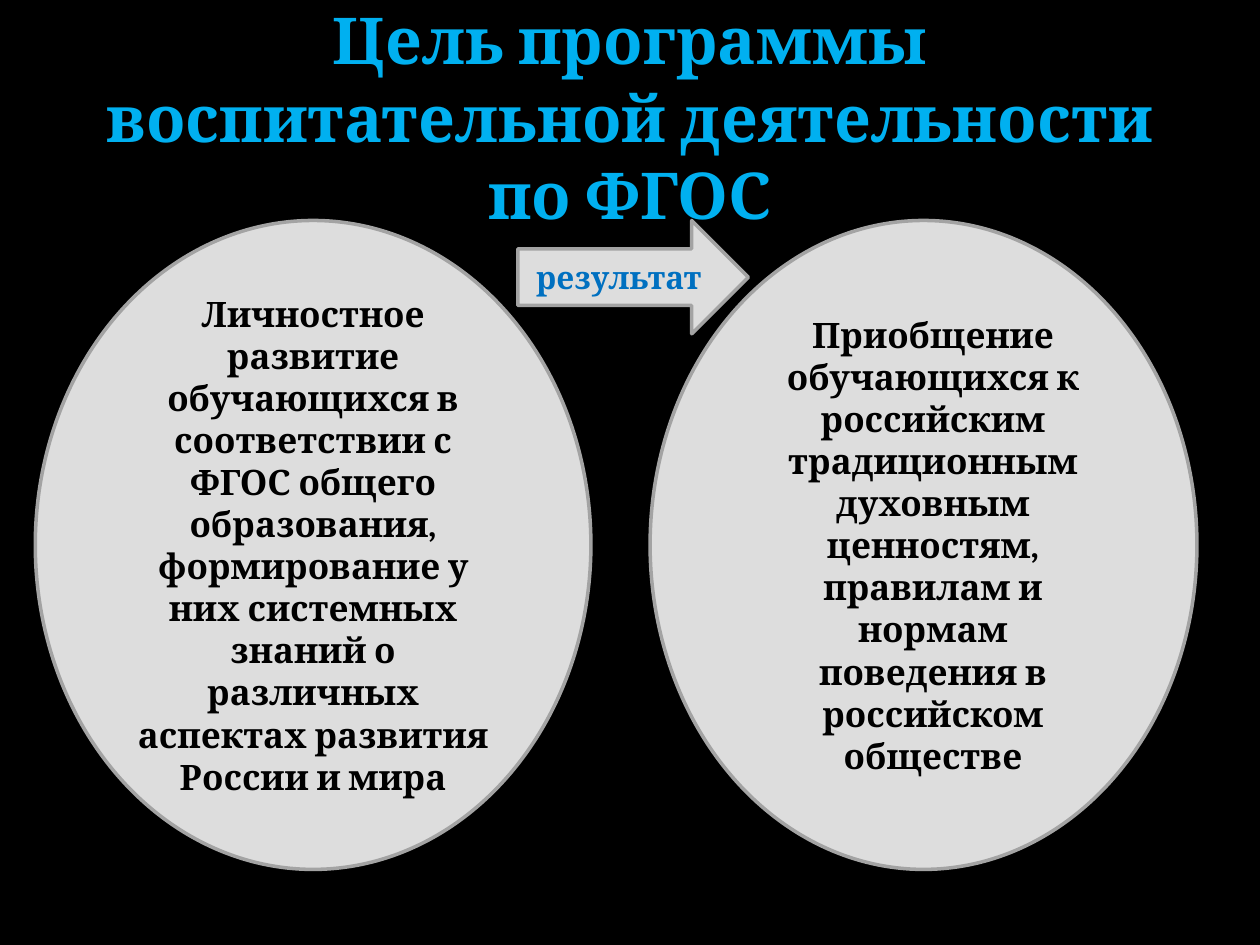
"""Builds a slide on the goal of the educational programme and its result."""
from dataclasses import dataclass

from pptx import Presentation
from pptx.dml.color import RGBColor
from pptx.enum.shapes import MSO_SHAPE
from pptx.enum.text import MSO_ANCHOR, MSO_AUTO_SIZE, PP_ALIGN
from pptx.util import Inches, Pt

OVAL = MSO_SHAPE.OVAL
RIGHT_ARROW = MSO_SHAPE.RIGHT_ARROW
MIDDLE = MSO_ANCHOR.MIDDLE
NO_AUTOFIT = MSO_AUTO_SIZE.NONE
CENTER = PP_ALIGN.CENTER


@dataclass(frozen=True)
class Theme:
    font: str = "Cambria"
    background: str = "000000"
    title: str = "00B0F0"
    fill: str = "DDDDDD"
    outline: str = "A3A3A3"
    body: str = "000000"
    label: str = "0070C0"
    title_size: float = 36.9
    body_size: float = 20
    label_size: float = 18
    outline_width: float = 2


theme = Theme()


def write(shape, text, size, color):
    frame = shape.text_frame
    frame.text = text
    frame.word_wrap = True
    frame.auto_size = NO_AUTOFIT
    frame.vertical_anchor = MIDDLE
    paragraph = frame.paragraphs[0]
    paragraph.alignment = CENTER
    font = paragraph.runs[0].font
    font.name = theme.font
    font.size = Pt(size)
    font.bold = True
    font.color.rgb = RGBColor.from_string(color)
    return paragraph


deck = Presentation()
deck.slide_width, deck.slide_height = Inches(10), Inches(7.5)
page = deck.slides.add_slide(deck.slide_layouts[5])
page.background.fill.solid()
page.background.fill.fore_color.rgb = RGBColor.from_string(theme.background)

title = page.shapes.title
title.left, title.top = Inches(0.5), Inches(0.3)
title.width, title.height = Inches(9), Inches(1.25)
write(title, "Цель программы воспитательной деятельности по ФГОС",
      theme.title_size, theme.title)

goal = (
    "Личностное развитие обучающихся в соответствии с ФГОС общего образования, "
    "формирование у них системных знаний о различных аспектах развития России и мира"
)
outcome = (
    "Приобщение обучающихся к российским традиционным духовным ценностям, "
    "правилам и нормам поведения в российском обществе"
)
figures = [
    (OVAL, 0.28, 4.41, 5.15, goal, theme.body_size, theme.body, 0),
    (OVAL, 5.16, 4.34, 5.15, outcome, theme.body_size, theme.body, 0.15),
    (RIGHT_ARROW, 4.11, 1.83, 0.9, "результат", theme.label_size, theme.label, 0),
]
figures_top = Inches(1.75)

for kind, left, width, height, text, size, color, indent in figures:
    figure = page.shapes.add_shape(
        kind, Inches(left), figures_top, Inches(width), Inches(height))
    figure.shadow.inherit = False
    figure.fill.solid()
    figure.fill.fore_color.rgb = RGBColor.from_string(theme.fill)
    figure.line.color.rgb = RGBColor.from_string(theme.outline)
    figure.line.width = Pt(theme.outline_width)
    paragraph = write(figure, text, size, color)
    if indent:
        paragraph._p.get_or_add_pPr().set("marL", str(Inches(indent)))

deck.save("out.pptx")
